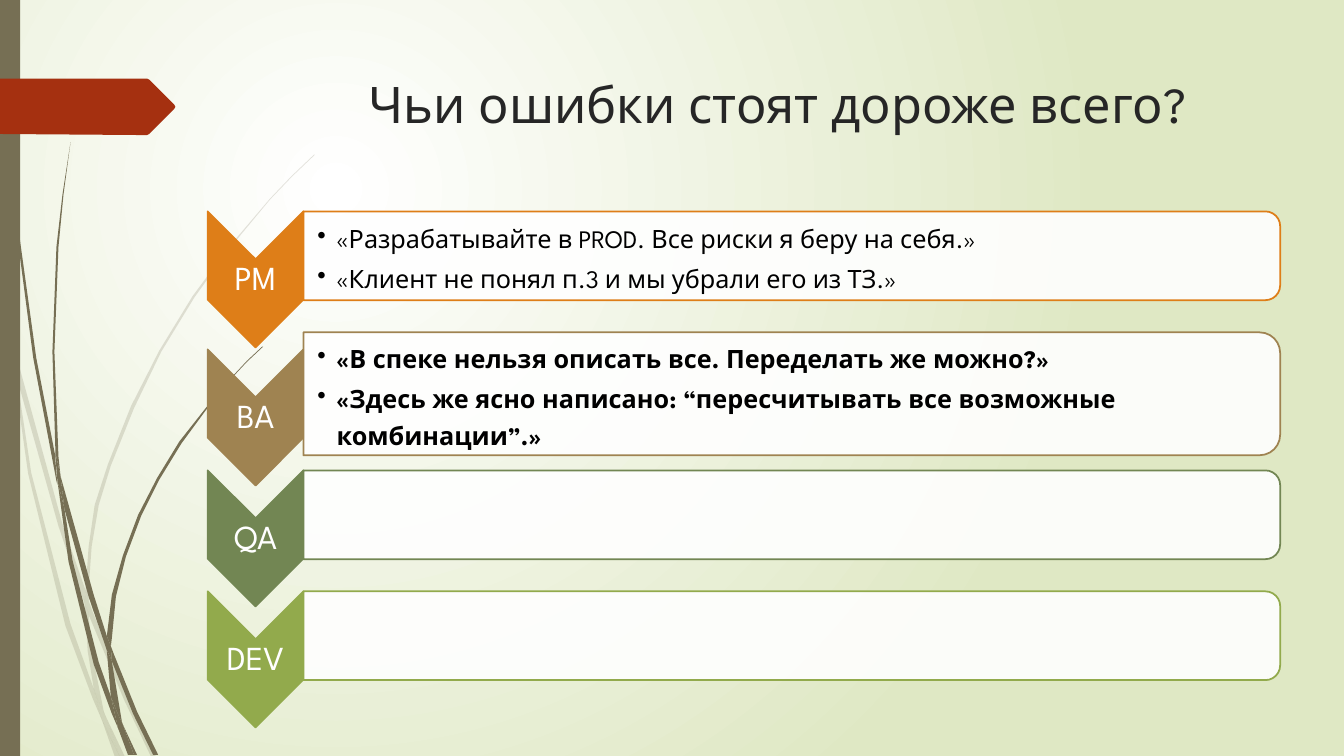
from lxml import etree
from pptx import Presentation
from pptx.dml.color import RGBColor
from pptx.enum.shapes import MSO_SHAPE
from pptx.enum.text import MSO_ANCHOR, PP_ALIGN
from pptx.oxml.ns import qn
from pptx.util import Pt

RECT, CHEVRON = MSO_SHAPE.RECTANGLE, MSO_SHAPE.CHEVRON
ROUND_SIDE = MSO_SHAPE.ROUND_2_SAME_RECTANGLE
CENTER, LEFT = PP_ALIGN.CENTER, PP_ALIGN.LEFT
TOP, MIDDLE = MSO_ANCHOR.TOP, MSO_ANCHOR.MIDDLE

# Content: role, colour, card height, bold quotes, quotes
TITLE = "Чьи ошибки стоят дороже всего?"
ROLES = [
    ("PM", "DE7E18", 63.4, False,
     ["«Разрабатывайте в PROD. Все риски я беру на себя.»",
      "«Клиент не понял п.3 и мы убрали его из ТЗ.»"]),
    ("BA", "9F8351", 87.8, True,
     ["«В спеке нельзя описать все. Переделать же можно?»",
      "«Здесь же ясно написано: “пересчитывать все возможные комбинации”.»"]),
    ("QA", "728653", 63.4, False, []),
    ("DEV", "92AA4C", 63.4, False, []),
]

# Decoration outlines, in grid units of 0.72 pt
GRID = 0.72
PALE_GRASS = [
    [(11, 350), (9, 322), (0, 282), (0, 299), (10, 344)],
    [(58, 522), (84, 599), (85, 586), (62, 520), (14, 345), (17, 376)],
    [(92, 607), (88, 596), (88, 610), (123, 694), (150, 751), (155, 751),
     (127, 692)],
    [(119, 751), (124, 751), (105, 711)],
    [(93, 683), (70, 619), (31, 469), (17, 376), (11, 350), (28, 470),
     (65, 621), (92, 693), (101, 714), (99, 707)],
    [(84, 599), (87, 646), (93, 683), (96, 692), (105, 711), (103, 706),
     (91, 646), (88, 610), (88, 608)],
    [(88, 584), (91, 542), (98, 501), (110, 462), (133, 405), (160, 349),
     (193, 295), (229, 245), (268, 198), (290, 175), (312, 154), (312, 153),
     (289, 175), (268, 197), (228, 244), (191, 294), (158, 348), (130, 403),
     (107, 461), (94, 501), (88, 542), (85, 584), (85, 586), (88, 596)],
    [(101, 714), (114, 751), (119, 751)],
    [(88, 608), (88, 610), (88, 596), (85, 586), (84, 599)],
    [(96, 692), (93, 683), (99, 707), (101, 714), (119, 751), (105, 711)],
]
DARK_GRASS = [
    [(7, 110), (17, 233), (33, 355), (56, 477), (57, 481), (55, 457),
     (55, 453), (36, 355), (19, 232), (8, 109), (5, 48), (4, 0), (3, 0),
     (4, 48)],
    [(88, 592), (106, 645), (106, 633), (106, 631), (93, 590), (60, 472),
     (64, 505)],
    [(113, 649), (110, 641), (111, 656), (132, 708), (152, 749), (157, 749),
     (136, 706)],
    [(110, 691), (98, 657), (72, 556), (64, 505), (57, 477), (68, 557),
     (93, 659), (111, 708), (117, 722), (116, 717)],
    [(60, 472), (58, 453), (54, 349), (58, 245), (63, 193), (70, 141),
     (62, 193), (56, 245), (52, 349), (55, 449)],
    [(133, 749), (136, 749), (122, 719)],
    [(57, 477), (64, 505), (60, 472), (55, 449), (55, 453)],
    [(111, 633), (115, 592), (125, 552), (140, 512), (158, 476), (180, 440),
     (205, 406), (231, 374), (245, 359), (261, 344), (260, 344), (245, 358),
     (231, 373), (204, 405), (178, 438), (156, 474), (137, 511), (122, 551),
     (111, 590), (106, 631), (110, 641)],
    [(117, 722), (127, 749), (131, 749)],
    [(106, 645), (110, 691), (116, 706), (122, 719), (121, 716), (111, 656),
     (109, 651)],
    [(106, 645), (109, 651), (111, 656), (110, 641), (106, 631), (106, 633)],
    [(116, 706), (110, 691), (116, 717), (117, 722), (130, 749), (133, 749),
     (122, 719)],
]
PAGE_ARROW = [(173, 108), (148, 133), (146, 134), (136, 134), (0, 133),
              (0, 78), (136, 78), (146, 78), (148, 79), (173, 104),
              (174, 106)]

FONT = "League Spartan"
TITLE_STYLE = dict(size=36, color="262626", align=CENTER, anchor=TOP,
                   inset=(7.2, 3.6, 7.2, 3.6))
LABEL_STYLE = dict(size=24, color="FFFFFF", align=CENTER, anchor=MIDDLE,
                   inset=(1.4, 1.4, 1.4, 1.4), spacing=0.9)
QUOTE_STYLE = dict(size=18, color="000000", align=LEFT, anchor=MIDDLE,
                   inset=(10.1, 0.7, 0.7, 0.7), spacing=1.2, after=2.7,
                   indent=13.7)


def rgb(color):
    return RGBColor.from_string(color)


def paint(shape, fill, line=None, opacity=100):
    shape.shadow.inherit = False
    shape.fill.solid()
    shape.fill.fore_color.rgb = rgb(fill)
    if opacity < 100:
        color = shape.fill._xPr.find(qn("a:solidFill"))[0]
        etree.SubElement(color, qn("a:alpha"), val=str(opacity * 1000))
    if line:
        shape.line.color.rgb = rgb(line)
        shape.line.width = Pt(1.25)
    else:
        shape.line.fill.background()


def outline(points, fill, opacity=100):
    builder = slide.shapes.build_freeform(*points[0], scale=Pt(GRID))
    builder.add_line_segments(points[1:], close=True)
    paint(builder.convert_to_shape(), fill, opacity=opacity)


def turned(kind, left, top, width, height, **look):
    """Add a shape turned by 90° that covers the given area."""
    shift = (width - height) / 2
    shape = slide.shapes.add_shape(kind, Pt(left + shift), Pt(top - shift),
                                   Pt(height), Pt(width))
    shape.rotation = 90
    paint(shape, **look)


def write(lines, left, top, width, height, style, bold=False):
    frame = slide.shapes.add_textbox(Pt(left), Pt(top), Pt(width),
                                     Pt(height)).text_frame
    frame.word_wrap = True
    frame.vertical_anchor = style["anchor"]
    for side, gap in zip(("left", "top", "right", "bottom"), style["inset"]):
        setattr(frame, f"margin_{side}", Pt(gap))
    for number, line in enumerate(lines):
        paragraph = frame.paragraphs[0] if number == 0 else frame.add_paragraph()
        layout = dict(alignment=style["align"],
                      line_spacing=style.get("spacing", 1.0),
                      space_after=Pt(style.get("after", 0)))
        for name, value in layout.items():
            setattr(paragraph, name, value)
        if "indent" in style:
            indent = Pt(style["indent"])
            props = paragraph._p.get_or_add_pPr()
            props.set("marL", str(indent))
            props.set("indent", str(-indent))
            etree.SubElement(props, qn("a:buChar"), char="•")
        run = paragraph.add_run()
        run.text = line
        for name, value in dict(name=FONT, size=Pt(style["size"]), bold=bold).items():
            setattr(run.font, name, value)
        run.font.color.rgb = rgb(style["color"])


prs = Presentation()
prs.slide_width, prs.slide_height = Pt(960), Pt(540)
slide = prs.slides.add_slide(prs.slide_layouts[6])

# Background glow
glow = slide.background.fill
glow.gradient()
for stop, color in zip(glow.gradient_stops, ("FFFFFF", "DFE8C4")):
    stop.color.rgb = rgb(color)
for stop, position in zip(glow.gradient_stops, (0, 1)):
    stop.position = position
gradient = slide.element.find(".//" + qn("a:gradFill"))
circle = etree.Element(qn("a:path"), {"path": "circle"})
etree.SubElement(circle, qn("a:fillToRect"),
                 l="50000", t="50000", r="100000", b="100000")
gradient.replace(gradient.find(qn("a:lin")), circle)

# Grass, side band and page arrow
for blades, opacity in ((PALE_GRASS, 20), (DARK_GRASS, 100)):
    for blade in blades:
        outline(blade, "766F54", opacity)
band = slide.shapes.add_shape(RECT, 0, 0, Pt(14.4), Pt(540))
paint(band, "766F54")
outline(PAGE_ARROW, "A53010")

# Title
write([TITLE], 204.5, 49, 702, 100.8, TITLE_STYLE)

# Role rows: a taller card is centred on its usual place
ROW_LEFT, ROW_TOP, ROW_PITCH = 148.3, 151, 86.4
CHEVRON_W, CHEVRON_H = 68.4, 97.2
CARD_W, CARD_H = 697.7, 63.4
card_left = ROW_LEFT + CHEVRON_W
card_top = ROW_TOP
for role, color, card_height, bold, quotes in ROLES:
    chevron_top = card_top + (card_height - CARD_H) / 2
    turned(CHEVRON, ROW_LEFT, chevron_top, CHEVRON_W, CHEVRON_H,
           fill=color, line=color)
    write([role], ROW_LEFT, chevron_top + CHEVRON_W / 2, CHEVRON_W,
          CHEVRON_H - CHEVRON_W, LABEL_STYLE)
    turned(ROUND_SIDE, card_left, card_top, CARD_W, card_height,
           fill="FFFFFF", line=color, opacity=90)
    if quotes:
        write(quotes, card_left, card_top + 3.1, CARD_W - 3.1,
              card_height - 6.2, QUOTE_STYLE, bold)
    card_top = chevron_top + ROW_PITCH

prs.save("out.pptx")
